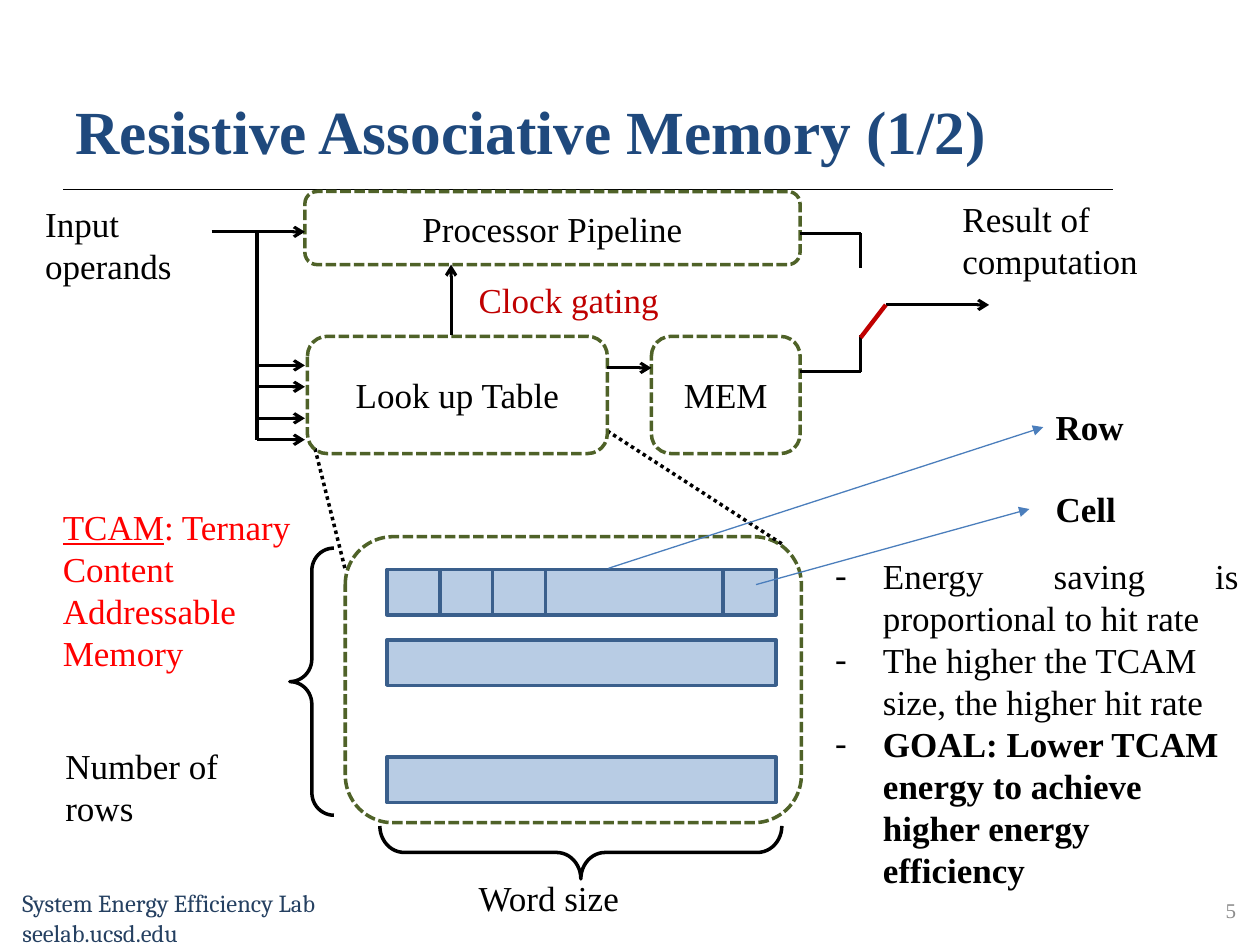
from dataclasses import dataclass

from lxml.etree import SubElement
from pptx import Presentation
from pptx.dml.color import RGBColor
from pptx.enum.dml import MSO_LINE as Dash
from pptx.enum.shapes import MSO_CONNECTOR as Connector, MSO_SHAPE as Shape
from pptx.enum.text import MSO_ANCHOR as Anchor, MSO_AUTO_SIZE as AutoSize, PP_ALIGN as Align
from pptx.oxml.ns import qn
from pptx.util import Inches, Pt


@dataclass(frozen=True)
class Theme:
    font: str = "Times New Roman"
    footer_font: str = "Cambria"
    title_size: float = 35
    body_size: float = 20
    footer_size: float = 14
    number_size: float = 12
    ink: str = "000000"
    title: str = "1F497D"
    footer: str = "254061"
    number: str = "8C8C8C"
    frame: str = "4F6228"
    cell: str = "4F81BD"
    cell_edge: str = "3A5F8C"
    pointer: str = "4B7EBC"
    alert: str = "C00000"
    accent: str = "FF0000"


class Page:
    def __init__(self, deck, theme):
        self.theme = theme
        self.slide = deck.slides.add_slide(deck.slide_layouts[5])
        self.shapes = self.slide.shapes

    def style(self, para, size=None, color=None, font=None, bold=False):
        para.font.name = font or self.theme.font
        para.font.size = Pt(size or self.theme.body_size)
        para.font.color.rgb = RGBColor.from_string(color or self.theme.ink)
        para.font.bold = bold

    def outline(self, item, color, width, dash=None):
        item.line.color.rgb = RGBColor.from_string(color)
        item.line.width = Pt(width)
        if dash:
            item.line.dash_style = dash

    def title(self, text, left, top, width, height):
        box = self.shapes.title
        box.left, box.top = Inches(left), Inches(top)
        box.width, box.height = Inches(width), Inches(height)
        frame = box.text_frame
        frame.text = text
        frame.auto_size = AutoSize.NONE
        frame.vertical_anchor = Anchor.BOTTOM
        para = frame.paragraphs[0]
        para.alignment = Align.LEFT
        self.style(para, self.theme.title_size, self.theme.title, bold=True)

    def text(self, lines, left, top, width, height, **style):
        box = self.shapes.add_textbox(Inches(left), Inches(top), Inches(width), Inches(height))
        frame = box.text_frame
        frame.word_wrap = True
        frame.auto_size = AutoSize.SHAPE_TO_FIT_TEXT
        frame.text = "\n".join(lines)
        for para in frame.paragraphs:
            self.style(para, **style)
        return frame

    def bullets(self, items, left, top, width, height):
        frame = self.text([""], left, top, width, height)
        for index, (text, align, bold) in enumerate(items):
            para = frame.add_paragraph() if index else frame.paragraphs[0]
            para.text = text
            para.alignment = align
            props = para._p.get_or_add_pPr()
            for child in list(props):
                props.remove(child)
            props.set("marL", str(Inches(0.38)))
            props.set("indent", str(Inches(-0.38)))
            SubElement(props, qn("a:buFont")).set("typeface", self.theme.font)
            SubElement(props, qn("a:buChar")).set("char", "-")
            self.style(para, bold=bold)

    def frame(self, left, top, width, height, text=None):
        box = self.shapes.add_shape(
            Shape.ROUNDED_RECTANGLE, Inches(left), Inches(top), Inches(width), Inches(height))
        box.shadow.inherit = False
        box.fill.background()
        self.outline(box, self.theme.frame, 2, Dash.SQUARE_DOT)
        if text:
            box.text_frame.text = text
            box.text_frame.vertical_anchor = Anchor.MIDDLE
            para = box.text_frame.paragraphs[0]
            para.alignment = Align.CENTER
            self.style(para)

    def cell(self, left, top, width, height):
        box = self.shapes.add_shape(
            Shape.RECTANGLE, Inches(left), Inches(top), Inches(width), Inches(height))
        box.shadow.inherit = False
        box.fill.solid()
        box.fill.fore_color.rgb = RGBColor.from_string(self.theme.cell)
        color = box._element.spPr.find(qn("a:solidFill"))[0]
        SubElement(color, qn("a:alpha")).set("val", "40000")
        self.outline(box, self.theme.cell_edge, 2)

    def brace(self, left, top, width, height, curve, rotation=0):
        brace = self.shapes.add_shape(
            Shape.LEFT_BRACE, Inches(left), Inches(top), Inches(width), Inches(height))
        brace.shadow.inherit = False
        brace.fill.background()
        brace.adjustments[0] = curve
        brace.rotation = rotation
        self.outline(brace, self.theme.ink, 2)

    def line(self, x1, y1, x2, y2, color=None, width=1.75, dash=None, head=None):
        line = self.shapes.add_connector(
            Connector.STRAIGHT, Inches(x1), Inches(y1), Inches(x2), Inches(y2))
        self.outline(line, color or self.theme.ink, width, dash)
        if head:
            SubElement(line.line._get_or_add_ln(), qn("a:tailEnd")).set("type", head)
        SubElement(line._element.spPr, qn("a:effectLst"))


def main():
    theme = Theme()
    deck = Presentation()
    deck.slide_width, deck.slide_height = Inches(10), Inches(7.5)
    page = Page(deck, theme)

    page.text(["System Energy Efficiency Lab", "seelab.ucsd.edu"], 0.08, 7, 3.17, 0.57,
              size=theme.footer_size, color=theme.footer, font=theme.footer_font)
    page.line(0.5, 1.5, 8.83, 1.5, width=0.5)
    page.title("Resistive Associative Memory (1/2)", 0.5, 0.42, 8.25, 0.95)
    number = page.text(["5"], 7.58, 7.02, 2.33, 0.4, size=theme.number_size, color=theme.number)
    number.auto_size = AutoSize.NONE
    number.vertical_anchor = Anchor.MIDDLE
    number.paragraphs[0].alignment = Align.RIGHT

    page.frame(2.74, 4.26, 3.62, 2.27)
    row_left, row_width, row_height, cell_width = 3.07, 3.09, 0.36, 0.42
    for top in (5.08, 6.01):
        page.cell(row_left, top, row_width, row_height)
    left = row_left
    wide_cell = row_width - 4 * cell_width
    for width in (cell_width, cell_width, cell_width, wide_cell, cell_width):
        page.cell(left, 4.52, width, row_height)
        left += width
    page.brace(2.3, 4.35, 0.35, 2.12, 0.51)
    page.brace(4.4, 5.17, 0.42, 3.19, 0.46, 270)
    for ends in ((2.5, 3.56, 2.74, 4.52), (4.82, 3.42, 6.21, 4.32)):
        page.line(*ends, width=2, dash=Dash.ROUND_DOT)

    page.frame(2.42, 1.52, 3.93, 0.58, "Processor Pipeline")
    page.frame(2.44, 2.67, 2.38, 0.93, "Look up Table")
    page.frame(5.17, 2.67, 1.18, 0.93, "MEM")

    bus, block_left, block_right, switch = 2.04, 2.42, 6.35, 6.83
    page.line(1.68, 1.84, block_left, 1.84, head="arrow")
    page.line(bus, 3.49, bus, 1.84)
    for y in (2.9, 3.07, 3.32, 3.49):
        page.line(bus, y, block_left, y, head="arrow")
    page.line(3.58, 2.66, 3.58, 2.1, head="arrow")
    page.line(4.82, 2.92, 5.17, 2.92, head="arrow")
    for y, contact in ((1.85, 2.13), (2.95, 2.66)):
        page.line(block_right, y, switch, y)
        page.line(switch, y, switch, contact)
    page.line(7.03, 2.42, 7.85, 2.42, head="arrow")
    page.line(switch, 2.68, 7.03, 2.42, color=theme.alert, width=2.5)

    page.text(["Number of rows"], 0.42, 5.86, 1.86, 0.77)
    page.text(["Word size"], 3.7, 6.91, 1.82, 0.44)
    page.text(["Input operands"], 0.26, 1.56, 1.67, 0.77)
    page.text(["Clock gating"], 3.7, 2.16, 2.09, 0.44, color=theme.alert)
    page.text(["Result of computation"], 7.54, 1.52, 2.27, 0.77)
    tcam = page.text(["TCAM"], 0.4, 3.96, 2.09, 1.45, color=theme.accent).paragraphs[0]
    tcam.runs[0].font.underline = True
    span = tcam.add_run()
    span.text = ": Ternary Content Addressable Memory"

    page.bullets([
        ("Energy saving is proportional to hit rate", Align.JUSTIFY, False),
        ("The higher the TCAM size, the higher hit rate", Align.LEFT, False),
        ("GOAL: Lower TCAM energy to achieve higher energy efficiency", Align.LEFT, True),
    ], 6.53, 4.35, 3.4, 2.79)
    for label, top in (("Row", 3.17), ("Cell", 3.82)):
        page.text([label], 8.28, top, 0.8, 0.44, bold=True)
    for ends in ((6, 4.64, 8.17, 4.04), (4.83, 4.51, 8.28, 3.39)):
        page.line(*ends, color=theme.pointer, width=0.75, head="triangle")

    deck.save("out.pptx")


if __name__ == "__main__":
    main()
